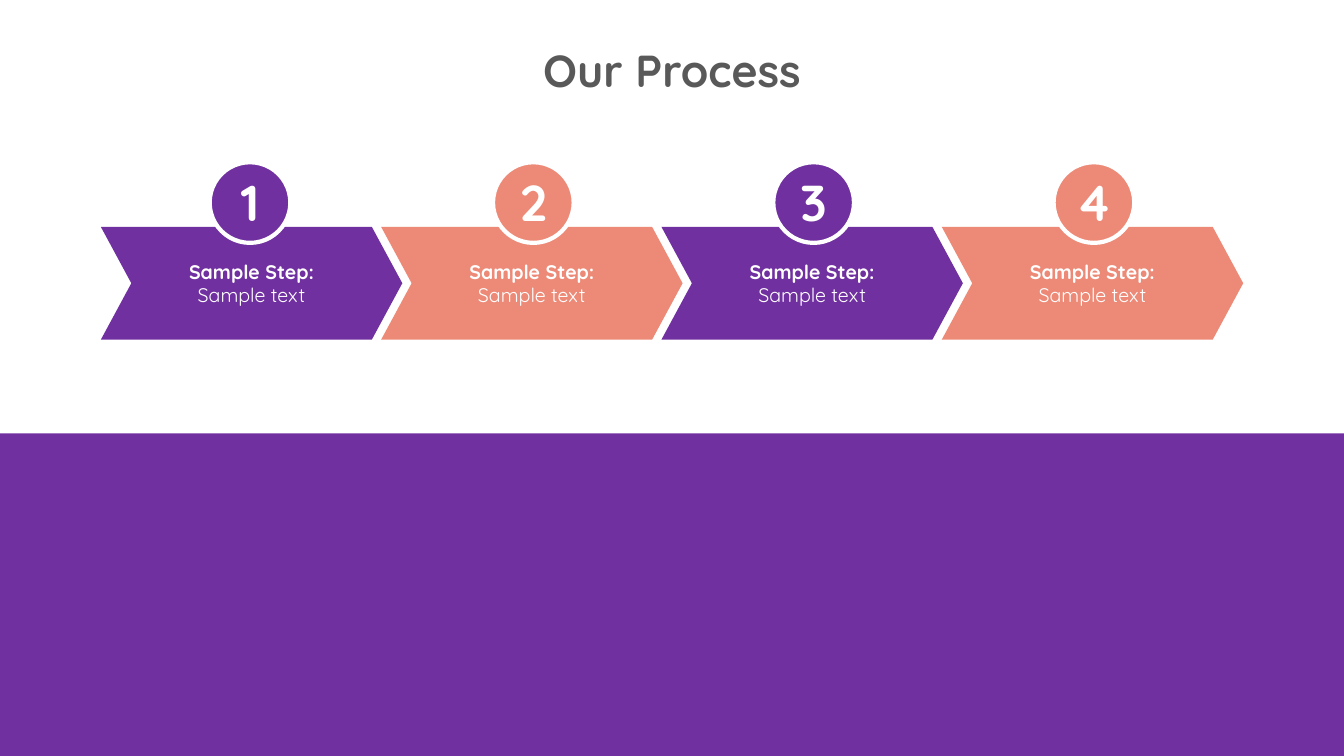
from dataclasses import dataclass

from pptx import Presentation, util as u
from pptx.dml.color import RGBColor
from pptx.enum import shapes as es, text as et
from pptx.shapes.autoshape import Shape
from pptx.slide import Slide
from pptx.text.text import TextFrame

Box = tuple[float, float, float, float]


@dataclass(frozen=True)
class Theme:
    font: str = "Quicksand"
    purple: str = "7030A0"
    coral: str = "ED8A77"
    white: str = "FFFFFF"
    gray: str = "595959"
    title: int = 32
    number: int = 36
    body: int = 14
    ring: int = 3


@dataclass(frozen=True)
class Step:
    head: str
    body: str
    color: str
    badge: float  # left edge of the numbered circle


LOOK = Theme()
STEPS = [
    Step("Sample Step:", "Sample text", LOOK.purple, 2.08),
    Step("Sample Step:", "Sample text", LOOK.coral, 4.89),
    Step("Sample Step:", "Sample text", LOOK.purple, 7.67),
    Step("Sample Step:", "Sample text", LOOK.coral, 10.45),
]
LEFT, PITCH = 1, 2.78


def write(frame: TextFrame, text: str, *, size: int,
          color: str = LOOK.white, bold: bool = True) -> None:
    """Add a centred run, on a new line if the frame already has text."""
    para = frame.paragraphs[0]
    para.alignment = et.PP_ALIGN.CENTER
    if para.runs:
        para.add_line_break()
    run = para.add_run()
    run.text = text
    run.font.name = LOOK.font
    run.font.size = u.Pt(size)
    run.font.bold = bold
    run.font.color.rgb = RGBColor.from_string(color)


def label(slide: Slide, box: Box, text: str, *, size: int,
          color: str = LOOK.white) -> None:
    frame = slide.shapes.add_textbox(*map(u.Inches, box)).text_frame
    frame.word_wrap = True
    frame.auto_size = et.MSO_AUTO_SIZE.SHAPE_TO_FIT_TEXT
    write(frame, text, size=size, color=color)


def solid(slide: Slide, kind: es.MSO_SHAPE, box: Box, color: str) -> Shape:
    shape = slide.shapes.add_shape(kind, *map(u.Inches, box))
    shape.shadow.inherit = False
    shape.fill.solid()
    shape.fill.fore_color.rgb = RGBColor.from_string(color)
    shape.line.fill.background()
    return shape


def arrow(slide: Slide, left: float, step: Step) -> None:
    shape = solid(slide, es.MSO_SHAPE.CHEVRON, (left, 2.25, 2.99, 1.12), step.color)
    shape.adjustments[0] = 0.27
    frame = shape.text_frame
    frame.margin_left = frame.margin_right = 0
    frame.margin_top = frame.margin_bottom = 0
    frame.word_wrap = True
    frame.vertical_anchor = et.MSO_ANCHOR.MIDDLE
    write(frame, step.head, size=LOOK.body)
    write(frame, step.body, size=LOOK.body, bold=False)


def badge(slide: Slide, num: int, step: Step) -> None:
    disc = solid(slide, es.MSO_SHAPE.OVAL, (step.badge, 1.61, 0.8, 0.8), step.color)
    disc.line.color.rgb = RGBColor.from_string(LOOK.white)
    disc.line.width = u.Pt(LOOK.ring)
    label(slide, (step.badge + 0.12, 1.65, 0.56, 0.71), str(num), size=LOOK.number)


def main() -> None:
    deck = Presentation()
    deck.slide_width, deck.slide_height = u.Inches(13.33), u.Inches(7.5)
    slide = deck.slides.add_slide(deck.slide_layouts[6])
    label(slide, (3.12, 0.37, 7.09, 0.64), "Our Process",
          size=LOOK.title, color=LOOK.gray)
    for i, step in enumerate(STEPS):
        arrow(slide, LEFT + i * PITCH, step)
    for num, step in enumerate(STEPS, 1):
        badge(slide, num, step)
    solid(slide, es.MSO_SHAPE.RECTANGLE, (0, 4.3, 13.33, 3.2), LOOK.purple)
    deck.save("out.pptx")


if __name__ == "__main__":
    main()
